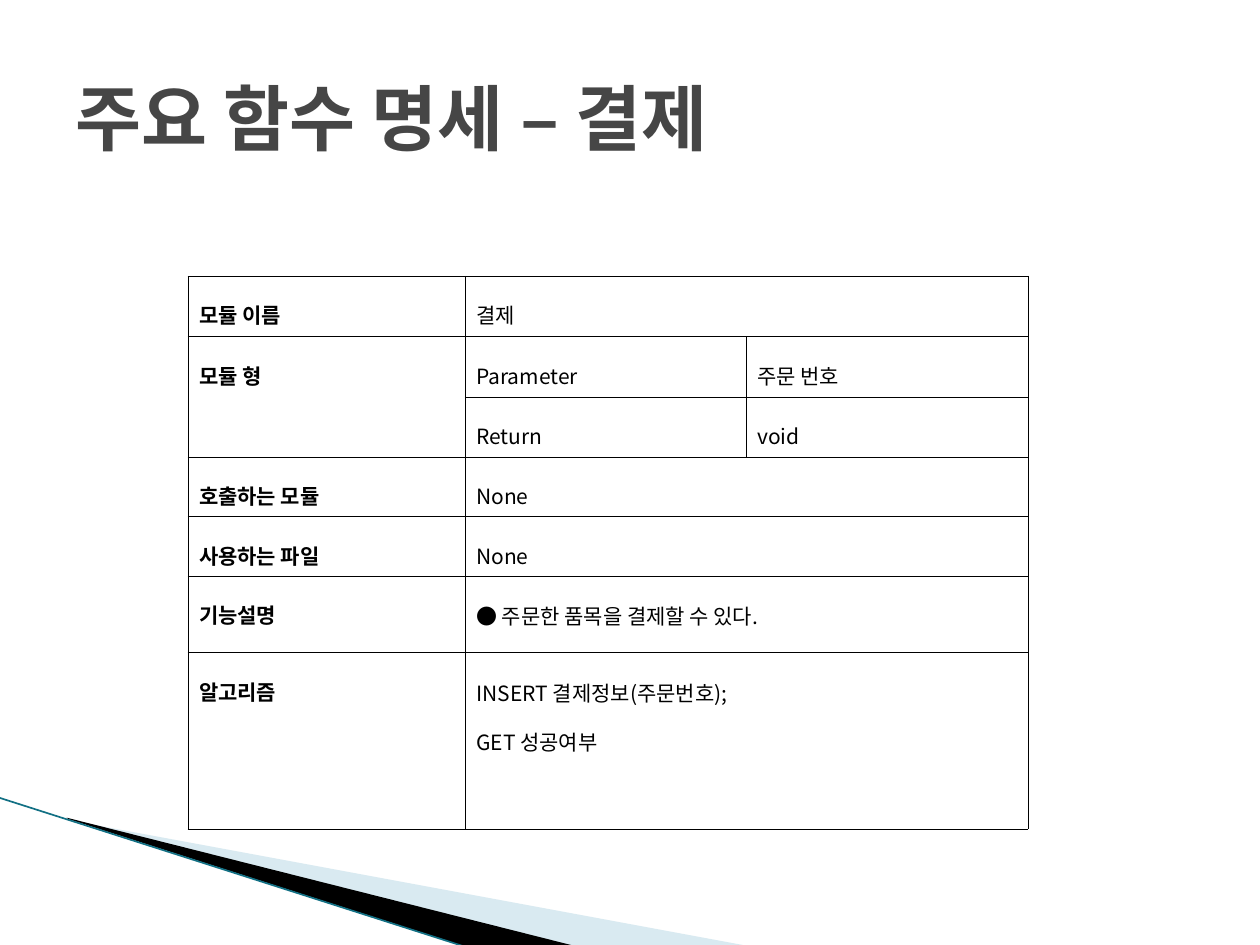
import pptx
import pptx.dml.color
import pptx.enum.shapes
import pptx.enum.text
import pptx.oxml
import pptx.oxml.ns
import pptx.util
from pptx.util import Inches
from lxml import etree

RGBColor = pptx.dml.color.RGBColor
BLACK = RGBColor(0x00, 0x00, 0x00)
TITLE_GRAY = RGBColor(0x46, 0x46, 0x46)
PALE_BLUE = RGBColor(0xA0, 0xCB, 0xDC)
EDGE_TEAL = RGBColor(0x12, 0x70, 0x84)
FACE = "Noto Sans CJK KR"
qn = pptx.oxml.ns.qn


def style_paragraph(paragraph, size, color, bold):
    font = paragraph.font
    font.name = FACE
    font.size = pptx.util.Pt(size)
    font.bold = bold
    font.color.rgb = color
    for run in paragraph.runs:
        etree.SubElement(run._r.get_or_add_rPr(), qn("a:ea"), typeface=FACE)


def add_border(cell, side):
    cell._tc.get_or_add_tcPr().append(pptx.oxml.parse_xml(
        f'<a:{side} xmlns:a="http://schemas.openxmlformats.org/drawingml/2006/main" w="3175">'
        f'<a:solidFill><a:srgbClr val="{BLACK}"/></a:solidFill></a:{side}>'))


presentation = pptx.Presentation()
presentation.slide_width = Inches(10)
presentation.slide_height = Inches(7.5)
slide = presentation.slides.add_slide(presentation.slide_layouts[6])

wedges = [
    ([(0.55, 6.51), (5.95, 7.51), (4.56, 7.51), (0.55, 6.5)], PALE_BLUE, 40),
    ([(0.53, 6.49), (4.57, 7.51), (3.72, 7.52), (0.54, 6.5)], BLACK, 100),
]
for corners, color, opacity in wedges:
    points = [(Inches(x), Inches(y)) for x, y in corners]
    builder = slide.shapes.build_freeform(*points[0])
    builder.add_line_segments(points[1:], close=True)
    wedge = builder.convert_to_shape()
    wedge.shadow.inherit = False
    wedge.fill.solid()
    wedge.fill.fore_color.rgb = color
    wedge.line.fill.background()
    if opacity < 100:
        tint = wedge._element.spPr.find(".//" + qn("a:srgbClr"))
        etree.SubElement(tint, qn("a:alpha"), val=str(opacity * 1000))

edge = slide.shapes.add_connector(
    pptx.enum.shapes.MSO_CONNECTOR.STRAIGHT,
    Inches(-0.01), Inches(6.33), Inches(3.71), Inches(7.52))
edge.line.color.rgb = EDGE_TEAL
edge.line.width = pptx.util.Pt(0.95)
etree.SubElement(edge._element.spPr, qn("a:effectLst"))

title = slide.shapes.add_textbox(Inches(0.5), Inches(0.3), Inches(9), Inches(1.25))
title.text_frame.word_wrap = True
title.text_frame.vertical_anchor = pptx.enum.text.MSO_ANCHOR.MIDDLE
title.text_frame.text = "주요 함수 명세 – 결제"
style_paragraph(title.text_frame.paragraphs[0], 41, TITLE_GRAY, True)

rows = [
    (0.48, ["모듈 이름", "결제", ""]),
    (0.48, ["모듈 형", "Parameter", "주문 번호"]),
    (0.48, ["", "Return", "void"]),
    (0.47, ["호출하는 모듈", "None", ""]),
    (0.47, ["사용하는 파일", "None", ""]),
    (0.61, ["기능설명", "● 주문한 품목을 결제할 수 있다.", ""]),
    (1.4, ["알고리즘", "INSERT 결제정보(주문번호);\nGET 성공여부", ""]),
]
module_table = slide.shapes.add_table(
    len(rows), 3, Inches(1.49), Inches(2.19), Inches(6.67),
    Inches(sum(height for height, texts in rows))).table
module_table.first_row = False
module_table.horz_banding = False
for column, width in zip(module_table.columns, [2.2, 2.23, 2.24]):
    column.width = Inches(width)

for row_index, (height, texts) in enumerate(rows):
    module_table.rows[row_index].height = Inches(height)
    for column_index, text in enumerate(texts):
        cell = module_table.cell(row_index, column_index)
        cell.margin_left = cell.margin_right = Inches(0.09)
        cell.margin_top = cell.margin_bottom = Inches(0.05 if row_index > 4 and column_index else 0.04)
        for side in ("lnL", "lnR", "lnT", "lnB"):
            add_border(cell, side)
        cell.fill.background()
        cell.text = text
        for paragraph in cell.text_frame.paragraphs:
            paragraph.alignment = pptx.enum.text.PP_ALIGN.JUSTIFY
            paragraph.line_spacing = 1.6
            style_paragraph(paragraph, 12, BLACK, column_index == 0)
    if not texts[2]:
        module_table.cell(row_index, 1).merge(module_table.cell(row_index, 2))
module_table.cell(1, 0).merge(module_table.cell(2, 0))

presentation.save("out.pptx")
